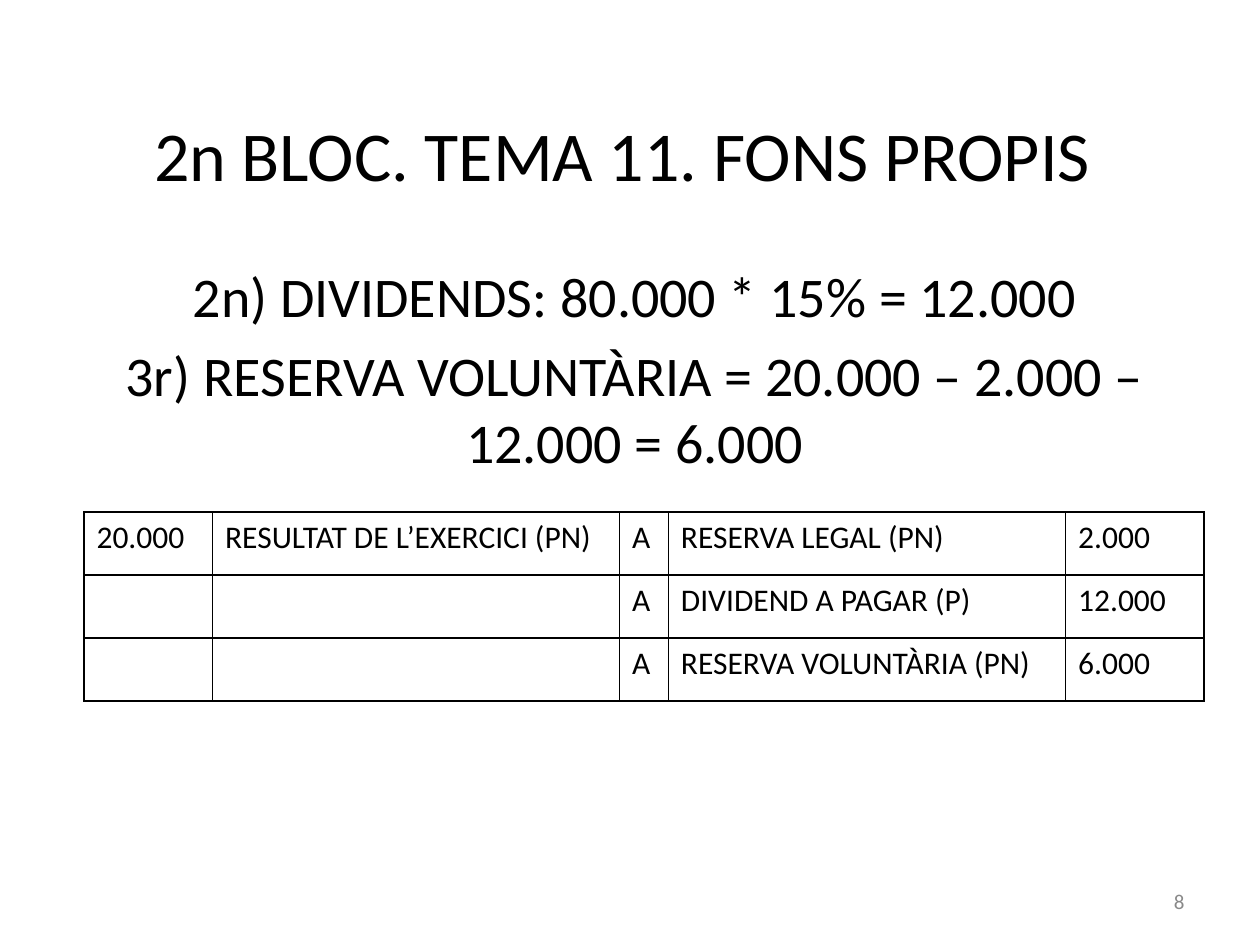
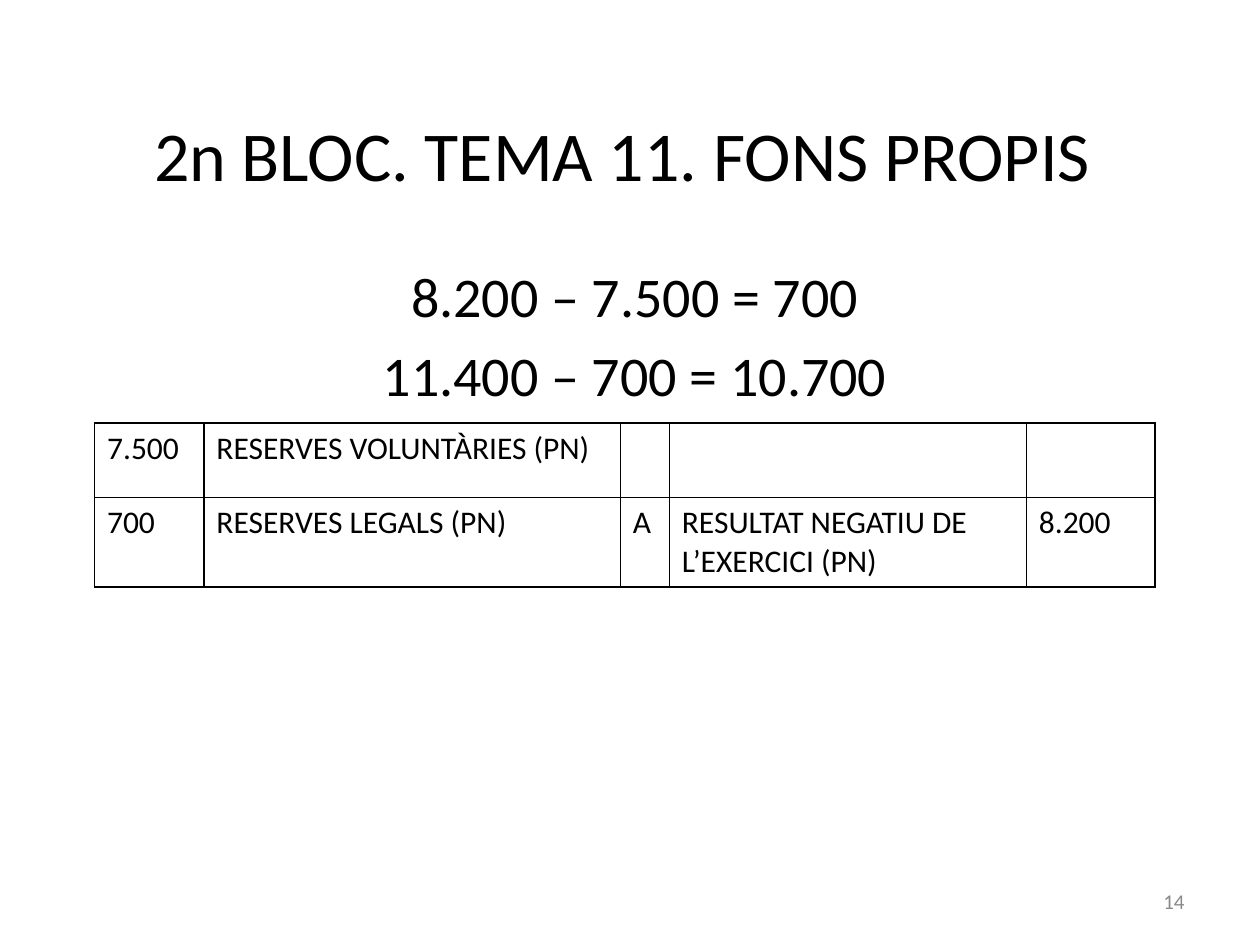
from dataclasses import dataclass

from lxml import etree
from pptx import Presentation
from pptx.dml.color import RGBColor
from pptx.enum.text import MSO_ANCHOR, MSO_AUTO_SIZE, PP_ALIGN
from pptx.oxml.ns import qn
from pptx.util import Pt

CENTER, RIGHT, LEFT = PP_ALIGN.CENTER, PP_ALIGN.RIGHT, PP_ALIGN.LEFT
TOP, MIDDLE = MSO_ANCHOR.TOP, MSO_ANCHOR.MIDDLE
NO_AUTOFIT = MSO_AUTO_SIZE.NONE
TITLE_ONLY = 5

# Content: column widths, row heights and positions are in points
TITLE = "2n BLOC. TEMA 11. FONS PROPIS "
PAGES = [
    {
        "number": "8",
        "lines": [
            "2n) DIVIDENDS: 80.000 * 15% = 12.000",
            "3r) RESERVA VOLUNTÀRIA = 20.000 – 2.000 – 12.000 = 6.000",
        ],
        "table_at": (48, 292.5),
        "columns": [73.5, 232.5, 28, 227, 79],
        "heights": [36, 36, 36],
        "entries": [
            ("20.000", "RESULTAT DE L’EXERCICI (PN)", "A", "RESERVA LEGAL (PN)", "2.000"),
            ("", "", "A", "DIVIDEND A PAGAR (P)", "12.000"),
            ("", "", "A", "RESERVA VOLUNTÀRIA (PN)", "6.000"),
        ],
    },
    {
        "number": "14",
        "lines": ["8.200 – 7.500 = 700", "11.400 – 700 = 10.700"],
        "table_at": (54, 241.75),
        "columns": [62.5, 238, 28, 204, 73.5],
        "heights": [42.5, 50.5],
        "entries": [
            ("7.500", "RESERVES VOLUNTÀRIES (PN)", "", "", ""),
            ("700", "RESERVES LEGALS (PN)", "A", "RESULTAT NEGATIU DE L’EXERCICI (PN)", "8.200"),
        ],
    },
]


@dataclass(frozen=True)
class Theme:
    font: str = "Calibri"
    ink: str = "000000"
    muted: str = "898989"
    title_size: float = 40
    body_size: float = 32
    cell_size: float = 18
    number_size: float = 12
    line_gap: float = 6.4
    border: float = 1


THEME = Theme()

# Shared places: left, top, width, height
TITLE_AREA = (54, 39.5, 612, 96)
BODY_AREA = (39.5, 146, 646.5, 326)
NUMBER_AREA = (516, 500.5, 168, 28.5)


def write(frame, lines, size, color=THEME.ink, align=CENTER):
    frame.text = "\n".join(lines)
    for index, para in enumerate(frame.paragraphs):
        para.alignment = align
        para.space_before = Pt(THEME.line_gap if index else 0)
        para.font.size = Pt(size)
        for span in para.runs:
            span.font.name = THEME.font
            span.font.size = Pt(size)
            span.font.color.rgb = RGBColor.from_string(color)


def set_frame(frame, anchor):
    frame.word_wrap = True
    frame.auto_size = NO_AUTOFIT
    frame.vertical_anchor = anchor


def add_text(page, area, lines, size, anchor=TOP, **style):
    box = page.shapes.add_textbox(*map(Pt, area))
    set_frame(box.text_frame, anchor)
    write(box.text_frame, lines, size, **style)


def add_title(page):
    title = page.shapes.title
    title.left, title.top, title.width, title.height = map(Pt, TITLE_AREA)
    set_frame(title.text_frame, MIDDLE)
    write(title.text_frame, [TITLE], THEME.title_size)


def outline(cell):
    properties = cell._tc.get_or_add_tcPr()
    for side in ("lnL", "lnR", "lnT", "lnB"):
        line = etree.SubElement(properties, qn(f"a:{side}"), w=str(Pt(THEME.border)))
        fill = etree.SubElement(line, qn("a:solidFill"))
        etree.SubElement(fill, qn("a:srgbClr"), val=THEME.ink)


def add_journal(page, content):
    entries, columns, heights = content["entries"], content["columns"], content["heights"]
    area = (*content["table_at"], sum(columns), sum(heights))
    table = page.shapes.add_table(len(entries), len(columns), *map(Pt, area)).table
    table.first_row = table.horz_banding = False
    for column, width in zip(table.columns, columns):
        column.width = Pt(width)
    for row, height, entry in zip(table.rows, heights, entries):
        row.height = Pt(height)
        for cell, text in zip(row.cells, entry):
            write(cell.text_frame, [text], THEME.cell_size, align=LEFT)
            outline(cell)
            cell.fill.background()


def main():
    deck = Presentation()
    deck.slide_width, deck.slide_height = Pt(720), Pt(540)
    for content in PAGES:
        page = deck.slides.add_slide(deck.slide_layouts[TITLE_ONLY])
        add_title(page)
        add_text(page, BODY_AREA, content["lines"], THEME.body_size)
        add_text(page, NUMBER_AREA, [content["number"]], THEME.number_size,
                 anchor=MIDDLE, color=THEME.muted, align=RIGHT)
        add_journal(page, content)
    deck.save("out.pptx")


if __name__ == "__main__":
    main()
